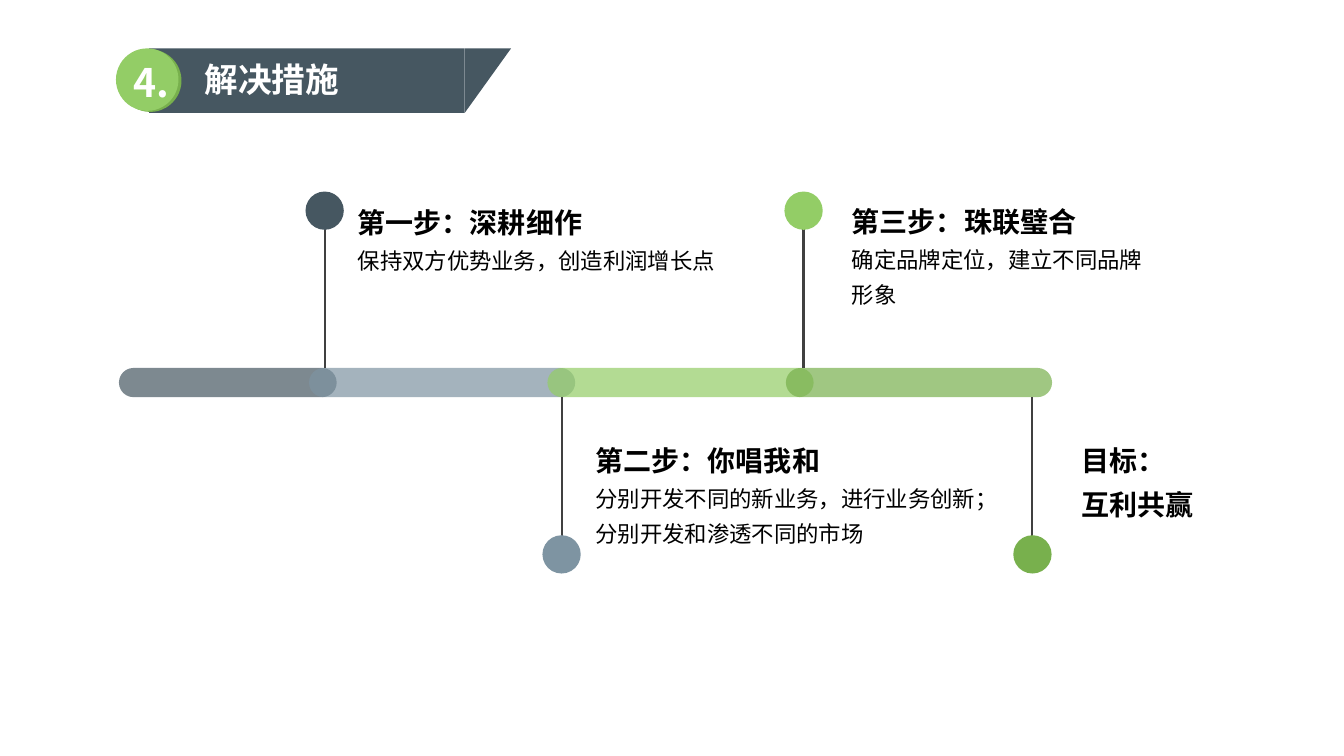
"""Build the four-step timeline slide on solution measures."""
import pptx
import pptx.util
import pptx.dml.color
import pptx.enum.shapes
import pptx.enum.text
import lxml.etree

KIND = pptx.enum.shapes.MSO_SHAPE
NS = "http://schemas.openxmlformats.org/drawingml/2006/main"

THEME = {
    "slate": "465761", "steel": "7E94A2", "lime": "93CD66", "leaf": "78B04D",
    "line": "404040", "ink": "000000", "white": "FFFFFF",
    "latin": "Roboto Condensed", "asian": "Noto Sans CJK SC",
    "num": 28, "title": 24, "head": 20, "body": 16,
}

BANNER = [("4.", "num", (1.23, 0.53, 0.56, 0.57)),
          ("解决措施", "title", (1.93, 0.54, 1.55, 0.5))]

# color, pin x, above the bar, note box, heads, body lines
STEPS = [
    ("slate", 3.22, True, (3.45, 1.89, 3.94, 0.89),
     ["第一步：深耕细作"], ["保持双方优势业务，创造利润增长点"]),
    ("steel", 5.57, False, (5.81, 4.25, 4.24, 1.24),
     ["第二步：你唱我和"],
     ["分别开发不同的新业务，进行业务创新；", "分别开发和渗透不同的市场"]),
    ("lime", 7.97, True, (8.35, 1.88, 3.21, 1.24),
     ["第三步：珠联璧合"], ["确定品牌定位，建立不同品牌形象"]),
    ("leaf", 10.24, False, (10.63, 4.25, 1.6, 0.98),
     ["目标：", "互利共赢"], []),
]

LEFT, FIRST, PITCH, LAP = 1.18, 3.34, 2.365, 0.275
TOP, THICK = 3.65, 0.29
DOT, STEM = 0.38, 1.56


def inch(*vals):
    return [pptx.util.Inches(v) for v in vals]


def tint(name):
    return pptx.dml.color.RGBColor.from_string(THEME[name])


def draw(home, kind, box, color, alpha=None):
    shape = home.add_shape(kind, *inch(*box))
    shape.shadow.inherit = False
    shape.fill.solid()
    shape.fill.fore_color.rgb = tint(color)
    shape.line.fill.background()
    if alpha:
        mark = shape._element.spPr.find(f".//{{{NS}}}srgbClr")
        lxml.etree.SubElement(mark, f"{{{NS}}}alpha", val=str(alpha * 1000))
    return shape


def write(home, box, lines, face, color, wrap, space=None):
    """Add a text box; lines holds (text, size name, bold)."""
    area = home.add_textbox(*inch(*box))
    frame = area.text_frame
    frame.word_wrap = wrap
    frame.auto_size = pptx.enum.text.MSO_AUTO_SIZE.SHAPE_TO_FIT_TEXT
    frame.text = "\n".join(text for text, _, _ in lines)
    for para, (_, size, bold) in zip(frame.paragraphs, lines):
        if space:
            para.line_spacing = space
        for run in para.runs:
            font = run.font
            font.size = pptx.util.Pt(THEME[size])
            font.bold = bold
            font.color.rgb = tint(color)
            font.name = THEME[face]
            lxml.etree.SubElement(font._element, f"{{{NS}}}ea",
                                  typeface=THEME["asian"])


def banner(slide):
    home = slide.shapes.add_group_shape().shapes
    draw(home, KIND.RECTANGLE, (1.48, 0.48, 3.13, 0.64), "slate")
    draw(home, KIND.OVAL, (1.18, 0.49, 0.62, 0.62), "leaf")
    draw(home, KIND.OVAL, (1.15, 0.48, 0.62, 0.62), "lime")
    tip = draw(home, KIND.ISOSCELES_TRIANGLE, (4.61, 0.48, 0.46, 0.64), "slate")
    tip.adjustments[0] = 0
    tip._element.spPr.xfrm.set("flipV", "1")
    for text, size, box in BANNER:
        write(home, box, [(text, size, True)], "asian", "white", False)


def bar(slide, i, color):
    right = FIRST + i * PITCH
    left = right - PITCH - LAP if i else LEFT
    shape = draw(slide.shapes, KIND.ROUNDED_RECTANGLE,
                 (left, TOP, right - left, THICK), color, 70)
    shape.adjustments[0] = 0.5


def pin(slide, color, x, above):
    home = slide.shapes.add_group_shape().shapes
    edge = TOP if above else TOP + THICK
    far = edge - STEM if above else edge + STEM
    stem = home.add_connector(pptx.enum.shapes.MSO_CONNECTOR.STRAIGHT,
                              *inch(x, far, x, edge))
    stem.line.color.rgb = tint("line")
    stem.line.width = pptx.util.Pt(1.5)
    lxml.etree.SubElement(stem._element.spPr, f"{{{NS}}}effectLst")
    draw(home, KIND.OVAL, (x - DOT / 2, far - DOT / 2, DOT, DOT), color)


def main():
    deck = pptx.Presentation()
    deck.slide_width, deck.slide_height = inch(13.33, 7.5)
    slide = deck.slides.add_slide(deck.slide_layouts[6])
    banner(slide)
    for i, step in enumerate(STEPS):
        bar(slide, i, step[0])
    for color, x, above, box, heads, body in STEPS:
        pin(slide, color, x, above)
        lines = [(t, "head", True) for t in heads]
        lines += [(t, "body", False) for t in body]
        write(slide.shapes, box, lines, "latin", "ink", True, 1.3)
    deck.save("out.pptx")


if __name__ == "__main__":
    main()
